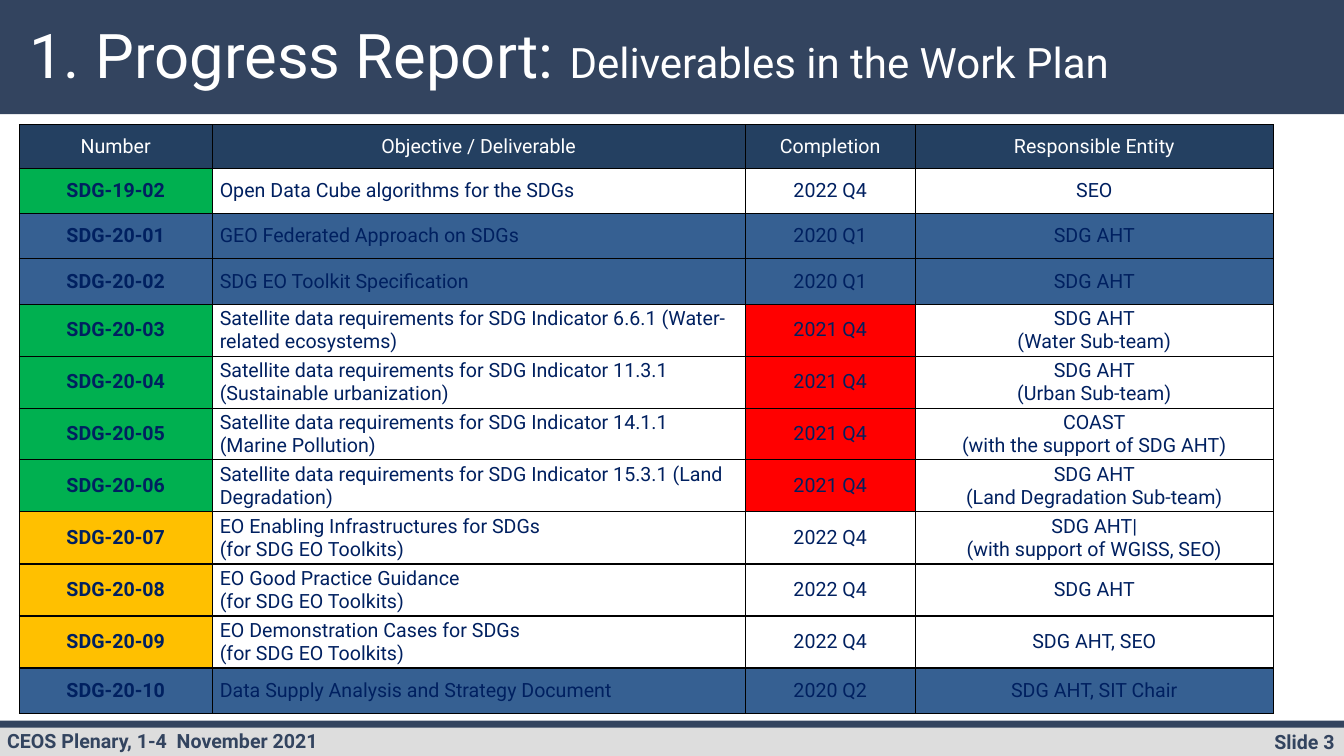
from dataclasses import dataclass
from lxml.etree import SubElement
from pptx import Presentation
from pptx.dml.color import RGBColor
from pptx.enum.shapes import MSO_SHAPE
from pptx.enum.text import MSO_ANCHOR, MSO_AUTO_SIZE, PP_ALIGN
from pptx.oxml.ns import qn
from pptx.util import Pt


@dataclass(frozen=True)
class Theme:
    face: str = "Roboto"
    slate: str = "33445F"
    grey: str = "DDDDDD"
    head: str = "244061"
    ink: str = "002060"
    white: str = "FFFFFF"
    black: str = "000000"
    green: str = "00B050"
    blue: str = "366092"
    amber: str = "FFC000"
    red: str = "FF0000"
    title: int = 44
    sub: int = 30
    body: int = 14


theme = Theme()


def style(font, size, color, bold=False):
    font.name = theme.face
    font.size = Pt(size)
    font.bold = bold
    font.color.rgb = RGBColor.from_string(color)


def border(cell, side, width):
    line = SubElement(cell._tc.get_or_add_tcPr(), qn("a:ln" + side), w=str(Pt(width)))
    fill = SubElement(line, qn("a:solidFill"))
    SubElement(fill, qn("a:srgbClr"), val=theme.black)


deck = Presentation()
deck.slide_width, deck.slide_height = Pt(960), Pt(540)
slide = deck.slides.add_slide(deck.slide_layouts[5])
shapes = slide.shapes

bars = [
    (0, 81.5, theme.slate),
    (517.7, 22.3, theme.grey),
    (514.8, 5, theme.slate),
]
for top, height, color in bars:
    bar = shapes.add_shape(MSO_SHAPE.RECTANGLE, 0, Pt(top), Pt(960), Pt(height))
    bar.shadow.inherit = False
    bar.fill.solid()
    bar.fill.fore_color.rgb = RGBColor.from_string(color)
    bar.line.fill.background()

notes = [
    (808.5, 517.7, 152, "Slide 3", PP_ALIGN.RIGHT),
    (-2, 517, 388, "CEOS Plenary, 1-4  November 2021", PP_ALIGN.LEFT),
]
for left, top, width, text, align in notes:
    frame = shapes.add_textbox(Pt(left), Pt(top), Pt(width), Pt(24.2)).text_frame
    frame.word_wrap = True
    para = frame.paragraphs[0]
    para.text = text
    para.alignment = align
    style(para.font, theme.body, theme.slate, True)

title = shapes.title
title.left, title.top, title.width, title.height = Pt(13.7), Pt(11.5), Pt(917), Pt(61)
frame = title.text_frame
frame.auto_size = MSO_AUTO_SIZE.NONE
frame.vertical_anchor = MSO_ANCHOR.MIDDLE
para = frame.paragraphs[0]
para.alignment = PP_ALIGN.LEFT
para.line_spacing = 0.9
for text, size in [
    ("1. Progress Report: ", theme.title),
    ("Deliverables in the Work Plan", theme.sub),
]:
    run = para.add_run()
    run.text = text
    style(run.font, size, theme.white)
shapes._spTree.append(title._element)

fills = {
    "head": [theme.head] * 4,
    "open": [theme.green] + [theme.white] * 3,
    "done": [theme.blue] * 4,
    "due": [theme.green, theme.white, theme.red, theme.white],
    "next": [theme.amber] + [theme.white] * 3,
}
need = "Satellite data requirements for SDG Indicator "
kits = "\n(for SDG EO Toolkits)"
rows = [
    ("head", "Number", "Objective / Deliverable", "Completion", "Responsible Entity"),
    ("open", "SDG-19-02", "Open Data Cube algorithms for the SDGs", "2022 Q4", "SEO"),
    ("done", "SDG-20-01", "GEO Federated Approach on SDGs", "2020 Q1", "SDG AHT"),
    ("done", "SDG-20-02", "SDG EO Toolkit Specification", "2020 Q1", "SDG AHT"),
    ("due", "SDG-20-03", need + "6.6.1 (Water-related ecosystems)", "2021 Q4",
     "SDG AHT\n(Water Sub-team)"),
    ("due", "SDG-20-04", need + "11.3.1 (Sustainable urbanization)", "2021 Q4",
     "SDG AHT\n(Urban Sub-team)"),
    ("due", "SDG-20-05", need + "14.1.1 (Marine Pollution)", "2021 Q4",
     "COAST\n(with the support of SDG AHT)"),
    ("due", "SDG-20-06", need + "15.3.1 (Land Degradation)", "2021 Q4",
     "SDG AHT\n(Land Degradation Sub-team)"),
    ("next", "SDG-20-07", "EO Enabling Infrastructures for SDGs" + kits, "2022 Q4",
     "SDG AHT|\n(with support of WGISS, SEO)"),
    ("next", "SDG-20-08", "EO Good Practice Guidance" + kits, "2022 Q4", "SDG AHT"),
    ("next", "SDG-20-09", "EO Demonstration Cases for SDGs" + kits, "2022 Q4",
     "SDG AHT, SEO"),
    ("done", "SDG-20-10", "Data Supply Analysis and Strategy Document", "2020 Q2",
     "SDG AHT, SIT Chair"),
]
tall = {"head": 31.4, "open": 32.3, "done": 32.3, "due": 37.15, "next": 37.15}
wide = [137.8, 380.7, 121.6, 255.6]
high = [tall[row[0]] for row in rows]

table = shapes.add_table(
    len(rows), len(wide), Pt(13.8), Pt(88.9), Pt(sum(wide)), Pt(sum(high))
).table
table.first_row = table.horz_banding = False
for col, width in zip(table.columns, wide):
    col.width = Pt(width)

above = 0.75
for r, (state, *texts) in enumerate(rows):
    table.rows[r].height = Pt(high[r])
    below = 1.5 if state == "next" else 0.75
    top = state == "head"
    for c, text in enumerate(texts):
        cell = table.cell(r, c)
        for side, width in zip("LRTB", (0.75, 0.75, above, below)):
            border(cell, side, width)
        cell.fill.solid()
        cell.fill.fore_color.rgb = RGBColor.from_string(fills[state][c])
        cell.vertical_anchor = MSO_ANCHOR.MIDDLE
        cell.margin_left = cell.margin_right = Pt(7.2 if top else 5.4)
        cell.margin_top = cell.margin_bottom = Pt(3.6 if top else 0)
        para = cell.text_frame.paragraphs[0]
        para.text = text
        para.alignment = PP_ALIGN.LEFT if c == 1 and not top else PP_ALIGN.CENTER
        style(para.font, theme.body, theme.white if top else theme.ink, c == 0 and not top)
    above = below

deck.save("out.pptx")
